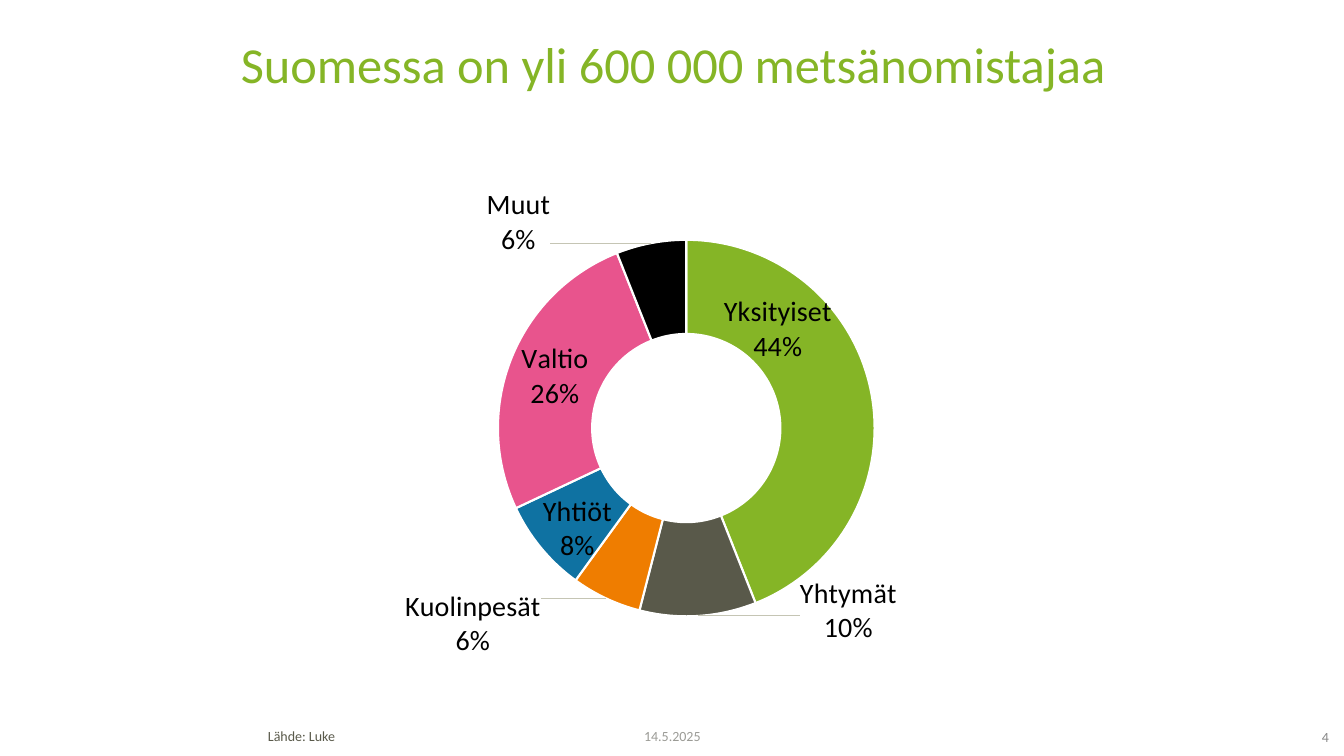
from copy import deepcopy

from lxml.etree import SubElement
from pptx import Presentation
from pptx.chart.data import CategoryChartData
from pptx.dml.color import RGBColor
from pptx.enum.chart import XL_CHART_TYPE as ChartType
from pptx.enum.text import MSO_ANCHOR as Anchor, PP_ALIGN as Align
from pptx.oxml import parse_xml
from pptx.oxml.ns import nsdecls, qn
from pptx.util import Inches, Pt

WIDTH, HEIGHT = Inches(13.33), Inches(7.5)
FONT = "Calibri"
GREEN, OLIVE = "85B526", "59594A"
OWNERS = [
    ("Yksityiset", 0.44, GREEN, (-0.04, -0.14)),
    ("Yhtymät", 0.10, OLIVE, (0.13, 0.08)),
    ("Kuolinpesät", 0.06, "EF7D00", (-0.13, 0.13)),
    ("Yhtiöt", 0.08, "0F72A2", (0, 0.02)),
    ("Valtio", 0.26, "E8548D", None),
    ("Muut", 0.06, "000000", (-0.12, -0.13)),
]
FOOTERS = [
    ("4", (94.9, 96.53, 3.98, 2.53), "878787", Align.RIGHT, Anchor.MIDDLE, (0, 0, 0, 0.04)),
    ("14.5.2025", (38.78, 95.33, 22.5, 4.13), "9B9B96", Align.CENTER, Anchor.MIDDLE, None),
    ("Lähde: Luke", (19.2, 95.6, 28.13, 3.6), OLIVE, Align.LEFT, Anchor.TOP, None),
]


def color(hex_string):
    return RGBColor.from_string(hex_string)


def place(left, top, width, height):
    return (int(WIDTH * left / 100), int(HEIGHT * top / 100),
            int(WIDTH * width / 100), int(HEIGHT * height / 100))


def style(font, size, hex_string):
    font.name, font.size = FONT, Pt(size)
    font.color.rgb = color(hex_string)


def write(frame, text, size, hex_string, align, anchor):
    frame.word_wrap = True
    frame.vertical_anchor = anchor
    para = frame.paragraphs[0]
    para.text, para.alignment = text, align
    style(para.font, size, hex_string)
    return para


def add_title(page, text):
    title = page.shapes.title
    title.left, title.top, title.width, title.height = place(6.25, 5.2, 87.7, 13.07)
    para = write(title.text_frame, text, 36, GREEN, Align.CENTER, Anchor.TOP)
    para.line_spacing = 0.8


def add_footer(page, text, area, hex_string, align, anchor, insets):
    frame = page.shapes.add_textbox(*place(*area)).text_frame
    if insets:
        (frame.margin_left, frame.margin_top,
         frame.margin_right, frame.margin_bottom) = map(Inches, insets)
    write(frame, text, 10, hex_string, align, anchor)


def make_layout(**settings):
    layout = parse_xml(f"<c:layout {nsdecls('c')}><c:manualLayout/></c:layout>")
    for name, value in settings.items():
        SubElement(layout[0], qn(f"c:{name}")).set("val", str(value))
    return layout


def add_labels(series):
    labels = series.data_labels
    labels.show_value = labels.show_category_name = True
    labels.show_percentage = False
    labels.number_format, labels.number_format_is_linked = "0%", False
    style(labels.font, 20, "000000")
    group = labels._element
    for leader in group.findall(qn("c:showLeaderLines")):
        group.remove(leader)
    SubElement(group, qn("c:separator")).text = "\n"
    shared = list(group)
    moved = [(index, owner[3]) for index, owner in enumerate(OWNERS) if owner[3]]
    for order, (index, (shift_x, shift_y)) in enumerate(moved):
        label = parse_xml(f"<c:dLbl {nsdecls('c')}><c:idx val='{index}'/></c:dLbl>")
        label.append(make_layout(x=shift_x, y=shift_y))
        label.extend(deepcopy(part) for part in shared)
        group.insert(order, label)
    SubElement(group, qn("c:showLeaderLines")).set("val", "1")
    group.append(parse_xml(
        f"<c:leaderLines {nsdecls('c', 'a')}><c:spPr><a:ln w='9525'><a:solidFill>"
        "<a:srgbClr val='C5C5B4'/></a:solidFill></a:ln></c:spPr></c:leaderLines>"))


def add_doughnut(page):
    data = CategoryChartData(number_format="0%")
    data.categories = [owner[0] for owner in OWNERS]
    data.add_series("Series 1", [owner[1] for owner in OWNERS])
    area = place(6.25, 20.93, 87.7, 68.8)
    chart = page.shapes.add_chart(ChartType.DOUGHNUT, *area, data).chart
    chart.has_title = chart.has_legend = False
    style(chart.font, 10, OLIVE)
    chart.plots[0].vary_by_categories = True
    series = chart.plots[0].series[0]
    for index, owner in enumerate(OWNERS):
        shape = series.points[index].format
        shape.fill.solid()
        shape.fill.fore_color.rgb = color(owner[2])
        shape.line.color.rgb = color("FFFFFF")
        shape.line.width = Pt(1.5)
    add_labels(series)
    plot_area = chart._chartSpace.chart.plotArea
    for layout in plot_area.findall(qn("c:layout")):
        plot_area.remove(layout)
    plot_area.insert(0, make_layout(layoutTarget="inner", xMode="edge", yMode="edge",
                                    x=0.234, y=0.157, w=0.554, h=0.724))


def main():
    deck = Presentation()
    deck.slide_width, deck.slide_height = WIDTH, HEIGHT
    page = deck.slides.add_slide(deck.slide_layouts.get_by_name("Title Only"))
    add_title(page, "Suomessa on yli 600 000 metsänomistajaa")
    add_doughnut(page)
    for footer in FOOTERS:
        add_footer(page, *footer)
    deck.save("out.pptx")


if __name__ == "__main__":
    main()
